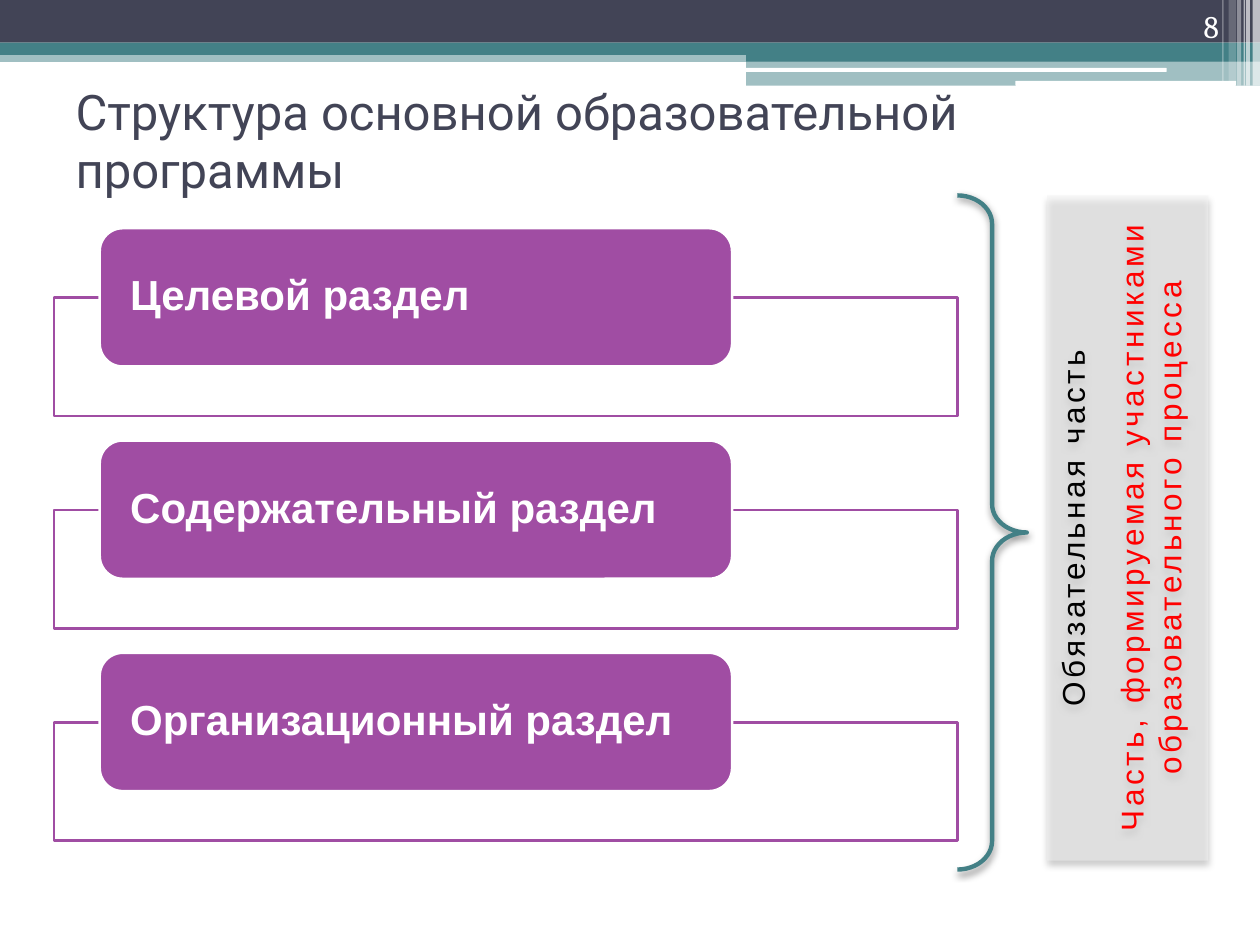
from lxml import etree
from pptx import Presentation
from pptx import util as u
from pptx.dml.color import RGBColor
from pptx.enum import shapes, text
from pptx.oxml import ns

Cm, Pt = u.Cm, u.Pt
SHAPE = shapes.MSO_SHAPE
COLORS = {"dark": "424456", "teal": "438086", "purple": "A04DA3", "white": "FFFFFF",
          "panel": "F2F2F2", "black": "000000", "red": "FF0000"}


def add_box(kind, box, fill=None, alpha=100, line=None, width=1.5):
    sp = s.shapes.add_shape(kind, *[Cm(v) for v in box])
    sp.shadow.inherit = False
    if fill:
        sp.fill.solid()
        sp.fill.fore_color.rgb = RGBColor.from_string(COLORS[fill])
        if alpha < 100:
            clr = sp.fill._xPr.find(".//" + ns.qn("a:srgbClr"))
            etree.SubElement(clr, ns.qn("a:alpha"), val=str(alpha * 1000))
    else:
        sp.fill.background()
    if line:
        sp.line.color.rgb = RGBColor.from_string(COLORS[line])
        sp.line.width = Pt(width)
    else:
        sp.line.fill.background()
    return sp


def style(p, size, font, color, align, bold=False):
    p.alignment = align
    p.font.size, p.font.name, p.font.bold = Pt(size), font, bold
    p.font.color.rgb = RGBColor.from_string(COLORS[color])


prs = Presentation()
prs.slide_width, prs.slide_height = Cm(25.4), Cm(19.05)
s = prs.slides.add_slide(prs.slide_layouts[5])

# Header bands
for box, color, alpha in [
    ((0, 1.02, 25.4, 0.23), "teal", 50),
    ((0, 0, 25.4, 0.86), "dark", 100),
    ((0, 0.86, 25.4, 0.25), "teal", 100),
    ((15.04, 0.99, 10.36, 0.25), "teal", 100),
    ((15.04, 1.22, 10.36, 0.51), "teal", 50),
]:
    add_box(SHAPE.RECTANGLE, box, color, alpha)
for box in [(15.01, 1.37, 8.51, 0.08), (20.47, 1.63, 4.45, 0.1)]:
    add_box(SHAPE.ROUNDED_RECTANGLE, box, "white")

# Vertical stripes at the right edge
for left, width, height, alpha in [
    (25.25, 0.15, 1.73, 65), (25.12, 0.08, 1.73, 65), (25.07, 0.03, 1.73, 60),
    (24.94, 0.08, 1.73, 40), (24.77, 0.15, 1.63, 20), (24.64, 0.03, 1.63, 30),
]:
    add_box(SHAPE.RECTANGLE, (left, 0, width, height), "white", alpha)

# Title
title = s.shapes.title
title.left, title.top, title.width, title.height = Cm(1.27), Cm(1.32), Cm(22.86), Cm(3)
tf = title.text_frame
tf.text = "Структура основной образовательной программы"
tf.vertical_anchor = text.MSO_ANCHOR.MIDDLE
style(tf.paragraphs[0], 28, "Roboto", "dark", text.PP_ALIGN.LEFT)

# Slide number
tf = s.shapes.add_textbox(Cm(22.71), 0, Cm(2.11), Cm(1.02)).text_frame
tf.word_wrap = True
tf.vertical_anchor = text.MSO_ANCHOR.BOTTOM
tf.text = "8"
style(tf.paragraphs[0], 18, "Cambria", "white", text.PP_ALIGN.RIGHT)

# Sections
sections = ["Целевой раздел", "Содержательный раздел", "Организационный раздел"]
for i, name in enumerate(sections):
    top = 4.6 + i * 4.28
    add_box(SHAPE.RECTANGLE, (1.09, top + 1.4, 18.21, 2.39), "white", 90, "purple")
    sp = add_box(SHAPE.ROUNDED_RECTANGLE, (2.01, top, 12.75, 2.79), "purple", line="white")
    tf = sp.text_frame
    tf.margin_left = tf.margin_right = Cm(0.48)
    tf.margin_top = tf.margin_bottom = 0
    tf.vertical_anchor = text.MSO_ANCHOR.MIDDLE
    tf.text = name
    p = tf.paragraphs[0]
    p.line_spacing = 0.9
    style(p, 24, "Arial", "white", text.PP_ALIGN.LEFT, bold=True)

# Side panel with vertical text
panel = add_box(SHAPE.RECTANGLE, (21.11, 3.94, 3.25, 13.41), "panel", 50)
tf = panel.text_frame
tf.word_wrap = True
tf.vertical_anchor = text.MSO_ANCHOR.TOP
tf._txBody.bodyPr.set("vert", "vert270")
parts = [("Обязательная часть", "black", 0),
         ("Часть, формируемая участниками", "red", 12),
         ("образовательного процесса", "red", 0)]
for i, (line, color, gap) in enumerate(parts):
    p = tf.paragraphs[0] if i == 0 else tf.add_paragraph()
    r = p.add_run()
    r.text = line
    r.font._element.set("spc", "200")
    if gap:
        p.space_before = Pt(gap)
    style(p, 18, "Arial", color, text.PP_ALIGN.CENTER)

# Brace
brace = add_box(SHAPE.RIGHT_BRACE, (19.3, 3.94, 1.4, 13.59), line="teal", width=2.5)
brace.adjustments[0] = 0.41

# Soft shadows below the panel and the brace
for sp, dist, alpha in [(panel, 3, 40), (brace, 2, 45)]:
    effects = sp._element.spPr.find(ns.qn("a:effectLst"))
    shadow = etree.SubElement(effects, ns.qn("a:outerShdw"), blurRad=str(Pt(4)),
                              dist=str(Pt(dist)), dir="5400000", rotWithShape="0")
    clr = etree.SubElement(shadow, ns.qn("a:srgbClr"), val=COLORS["black"])
    etree.SubElement(clr, ns.qn("a:alpha"), val=str(alpha * 1000))

prs.save("out.pptx")
